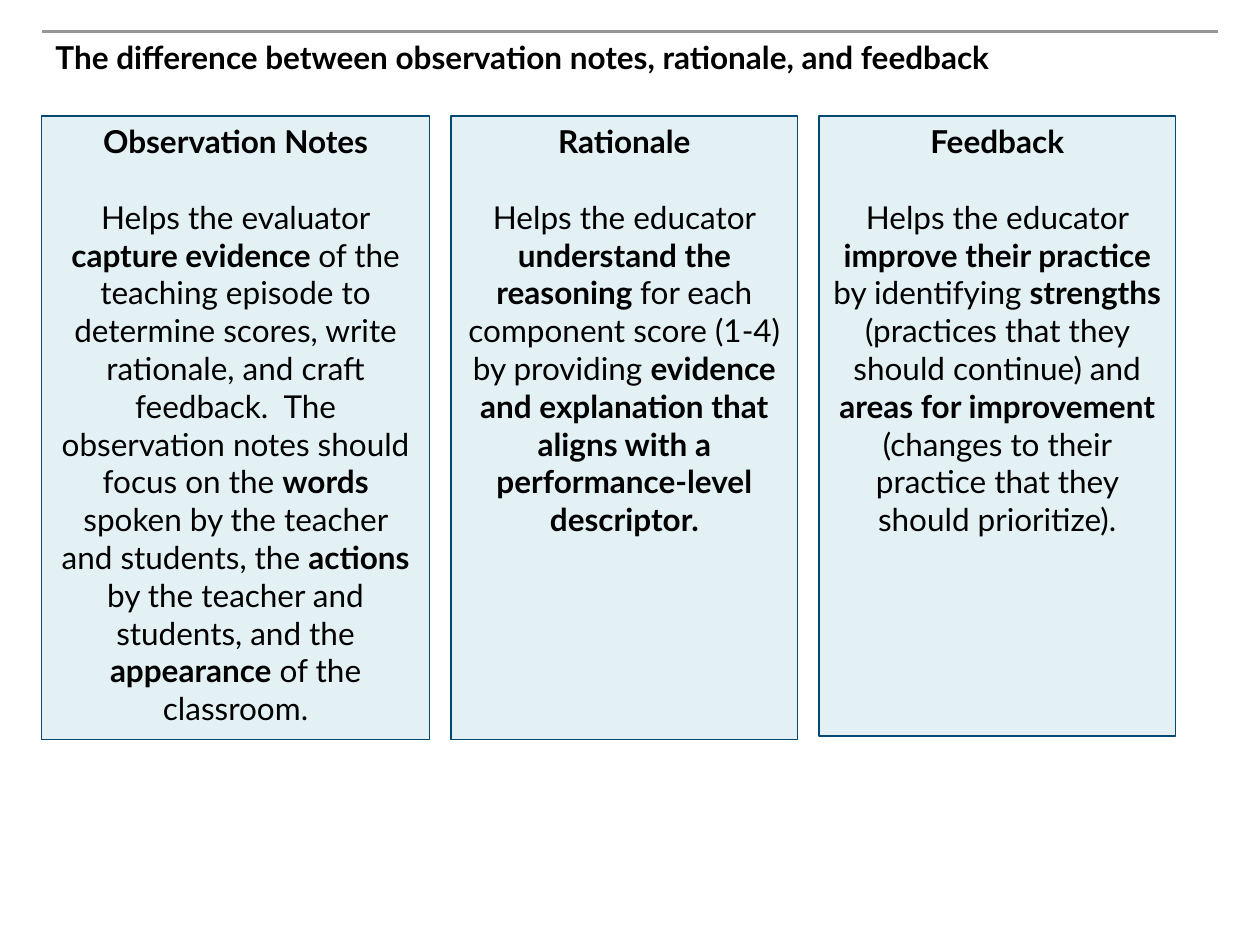
"""Build a slide comparing observation notes, rationale and feedback."""
import pptx
import pptx.dml.color
import pptx.enum.shapes
import pptx.enum.text
import pptx.oxml
import pptx.oxml.ns
import pptx.util

Inches = pptx.util.Inches
Pt = pptx.util.Pt
Align = pptx.enum.text.PP_ALIGN
Anchor = pptx.enum.text.MSO_ANCHOR

TITLE = "The difference between observation notes, rationale, and feedback"
COLUMNS = [
    {"heading": "Observation Notes", "width": 3.08, "height": 4.95, "body": [
        ("Helps the evaluator ", False),
        ("capture evidence ", True),
        ("of the teaching episode to determine scores, write rationale, and craft "
         "feedback.  The observation notes should focus on the ", False),
        ("words ", True),
        ("spoken by the teacher and students, the ", False),
        ("actions", True),
        (" by the teacher and students, and the ", False),
        ("appearance", True),
        (" of the classroom.", False)]},
    {"heading": "Rationale", "width": 2.75, "height": 4.95, "body": [
        ("Helps the educator ", False),
        ("understand the reasoning ", True),
        ("for each component score (1-4) by providing ", False),
        ("evidence and explanation that aligns with a performance-level descriptor.", True)]},
    {"heading": "Feedback", "width": 2.83, "height": 4.92, "body": [
        ("Helps the educator ", False),
        ("improve their practice ", True),
        ("by identifying ", False),
        ("strengths", True),
        (" (practices that they should continue) and ", False),
        ("areas for improvement ", True),
        ("(changes to their practice that they should prioritize).", False)]},
]
LEFT, TOP, GAP = 0.33, 0.92, 0.17
RULE_Y, RULE_END = 0.25, 9.67
LINE_PITCH = 21.6


def colour(value):
    return pptx.dml.color.RGBColor.from_string(value)


def write(paragraph, spans, align):
    paragraph.alignment = align
    for text, bold in spans:
        span = paragraph.add_run()
        span.text = text
        span.font.name = "Lato"
        span.font.size = Pt(18)
        span.font.bold = bold
        span.font.color.rgb = colour("000000")


def add_rule(page):
    rule = page.shapes.add_connector(
        pptx.enum.shapes.MSO_CONNECTOR.STRAIGHT,
        Inches(LEFT), Inches(RULE_Y), Inches(RULE_END), Inches(RULE_Y))
    rule.line.color.rgb = colour("969696")
    rule.line.width = Pt(2)
    properties = rule._element.spPr
    properties.append(pptx.oxml.parse_xml(
        "<a:effectLst %s/>" % pptx.oxml.ns.nsdecls("a")))


def add_title(page):
    title = page.shapes.title
    title.left, title.top = Inches(0.34), Inches(RULE_Y)
    title.width, title.height = Inches(9.32), Inches(0.92)
    frame = title.text_frame
    frame.auto_size = pptx.enum.text.MSO_AUTO_SIZE.NONE
    frame.vertical_anchor = Anchor.TOP
    write(frame.paragraphs[0], [(TITLE, True)], Align.LEFT)


def add_column(page, column, left):
    box = page.shapes.add_shape(
        pptx.enum.shapes.MSO_SHAPE.RECTANGLE, Inches(left), Inches(TOP),
        Inches(column["width"]), Inches(column["height"]))
    box.shadow.inherit = False
    box.fill.solid()
    box.fill.fore_color.rgb = colour("E3F1F5")
    box.line.color.rgb = colour("024873")
    box.line.width = Pt(1)
    frame = box.text_frame
    frame.word_wrap = True
    frame.vertical_anchor = Anchor.TOP
    write(frame.paragraphs[0], [(column["heading"], True)], Align.CENTER)
    body = frame.add_paragraph()
    body.space_before = Pt(LINE_PITCH)
    write(body, column["body"], Align.CENTER)


def main():
    deck = pptx.Presentation()
    deck.slide_width, deck.slide_height = Inches(10), Inches(7.5)
    page = deck.slides.add_slide(deck.slide_layouts[5])
    add_rule(page)
    add_title(page)
    left = LEFT
    for column in COLUMNS:
        add_column(page, column, left)
        left += column["width"] + GAP
    deck.save("out.pptx")


if __name__ == "__main__":
    main()
